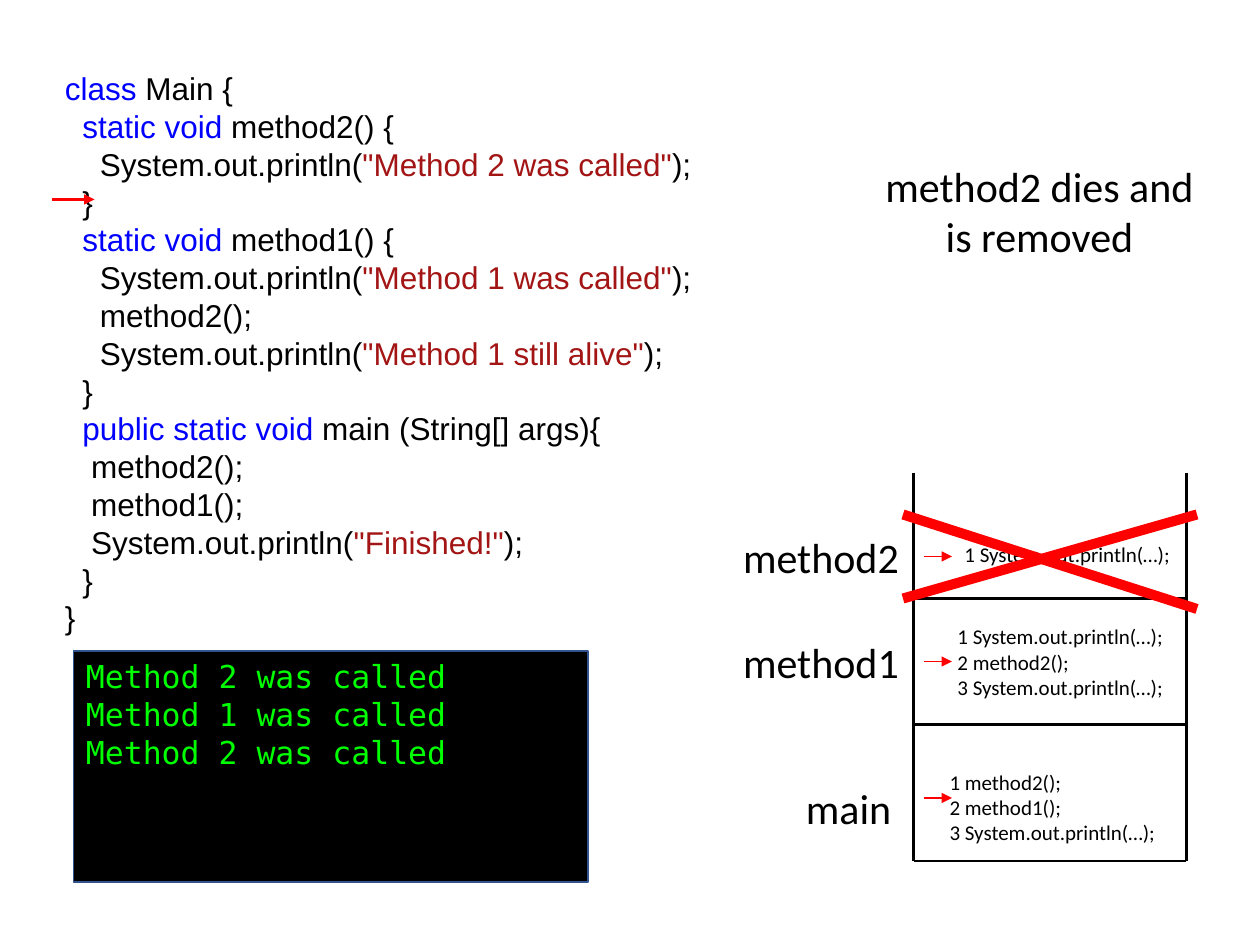
import pptx
import pptx.dml.color
import pptx.enum.shapes
import pptx.enum.text
import pptx.oxml
import pptx.oxml.ns
import pptx.util

Pt = pptx.util.Pt
COLOURS = {
    "text": "000000",
    "keyword": "0000FF",
    "string": "A31515",
    "accent": "FF0000",
    "console": "000000",
    "console border": "31538F",
    "console text": "00FF00",
}
KEYWORDS = {"class", "static void", "public static void"}
CODE_PITCH = 21.6

# A bar separates the differently coloured parts of a line.
CODE = """class| Main {
  |static void| method2() {
    System.out.println(|"Method 2 was called"|);
  }
  |static void| method1() {
    System.out.println(|"Method 1 was called"|);
    method2();
    System.out.println(|"Method 1 still alive"|);
  }
  |public static void |main (String[] args){
   method2();
   method1();
   System.out.println(|"Finished!"|);
  }
}"""

STACK_LEFT, STACK_RIGHT, STACK_TOP, STACK_BOTTOM = 522, 678, 270, 492


def rgb(name):
    return pptx.dml.color.RGBColor.from_string(COLOURS[name])


def code_colour(part):
    if part.startswith('"'):
        return "string"
    return "keyword" if part.strip() in KEYWORDS else "text"


class SlideBuilder:
    def __init__(self, slide, font="Calibri"):
        self.slide = slide
        self.font = font

    def format_run(self, run, size, colour, font=None):
        run.font.size = Pt(size)
        run.font.name = font or self.font
        run.font.color.rgb = rgb(colour)

    def box(self, left, top, width, height):
        shape = self.slide.shapes.add_textbox(Pt(left), Pt(top), Pt(width), Pt(height))
        shape.text_frame.word_wrap = True
        return shape.text_frame

    def text(self, left, top, width, height, text, size):
        frame = self.box(left, top, width, height)
        frame.text = text
        for paragraph in frame.paragraphs:
            for run in paragraph.runs:
                self.format_run(run, size, "text")
        return frame

    def code(self, left, top, width, height, source):
        frame = self.box(left, top, width, height)
        frame.text = source.replace("|", "")
        for paragraph, line in zip(frame.paragraphs, source.split("\n")):
            paragraph.line_spacing = Pt(CODE_PITCH)
            paragraph.text = ""
            for part in line.split("|"):
                run = paragraph.add_run()
                run.text = part
                self.format_run(run, 18, code_colour(part), "Arial")

    def console(self, left, top, width, height, text):
        shape = self.slide.shapes.add_shape(
            pptx.enum.shapes.MSO_SHAPE.RECTANGLE, Pt(left), Pt(top), Pt(width), Pt(height))
        shape.shadow.inherit = False
        shape.fill.solid()
        shape.fill.fore_color.rgb = rgb("console")
        shape.line.color.rgb = rgb("console border")
        shape.line.width = Pt(1)
        frame = shape.text_frame
        frame.word_wrap = True
        frame.vertical_anchor = pptx.enum.text.MSO_ANCHOR.TOP
        frame.text = text
        for paragraph in frame.paragraphs:
            paragraph.alignment = pptx.enum.text.PP_ALIGN.LEFT
            paragraph.line_spacing = Pt(CODE_PITCH)
            for run in paragraph.runs:
                self.format_run(run, 18, "console text", "DejaVu Sans Mono")

    def line(self, start, end, colour="text", width=1.5, arrow=False):
        connector = self.slide.shapes.add_connector(
            pptx.enum.shapes.MSO_CONNECTOR.STRAIGHT, *(Pt(value) for value in start + end))
        connector.line.color.rgb = rgb(colour)
        connector.line.width = Pt(width)
        if arrow:
            head = pptx.oxml.parse_xml(
                f'<a:tailEnd {pptx.oxml.ns.nsdecls("a")} type="triangle"/>')
            connector.line._get_or_add_ln().append(head)
        connector._element.spPr.append(
            pptx.oxml.parse_xml(f'<a:effectLst {pptx.oxml.ns.nsdecls("a")}/>'))

    def arrow(self, left, right, y, width=0.75):
        self.line((left, y), (right, y), "accent", width, arrow=True)


def main():
    presentation = pptx.Presentation()
    presentation.slide_width, presentation.slide_height = Pt(720), Pt(540)
    builder = SlideBuilder(presentation.slides.add_slide(presentation.slide_layouts[6]))

    builder.code(30, 36, 552, 335, CODE)
    builder.arrow(30, 54, 114, 1.25)
    builder.console(42, 372, 294, 132,
                    "Method 2 was called\nMethod 1 was called\nMethod 2 was called")
    title = builder.text(498, 88, 192, 65.5, "method2 dies and\vis removed", 24)
    title.paragraphs[0].alignment = pptx.enum.text.PP_ALIGN.CENTER

    for x in (STACK_LEFT, STACK_RIGHT):
        builder.line((x, STACK_TOP), (x, STACK_BOTTOM))
    for y in (342, 414, STACK_BOTTOM):
        builder.line((STACK_LEFT, y), (STACK_RIGHT, y))

    # Name box, statement box and arrow height of each stack frame.
    frames = [
        ("main", (453.5, 443.5, 64, 36), (535.5, 436, 142.5, 51), 456,
         "1 method2();\n2 method1();\n3 System.out.println(…);"),
        ("method1", (417.5, 360, 104.5, 36), (540, 353, 142.5, 51), 378,
         "1 System.out.println(…);\n2 method2();\n3 System.out.println(…);"),
        ("method2", (417.5, 300, 104.5, 36), (544, 306, 134, 29), 318,
         "1 System.out.println(…);"),
    ]
    for name, name_box, statement_box, arrow_y, statements in frames:
        builder.text(*name_box, name, 24)
        builder.text(*statement_box, statements, 12)
        builder.arrow(528, 544, arrow_y)

    builder.line((516, 294), (684, 348), "accent", 5.75)
    builder.line((516, 342), (684, 294), "accent", 5.75)
    presentation.save("out.pptx")


if __name__ == "__main__":
    main()
